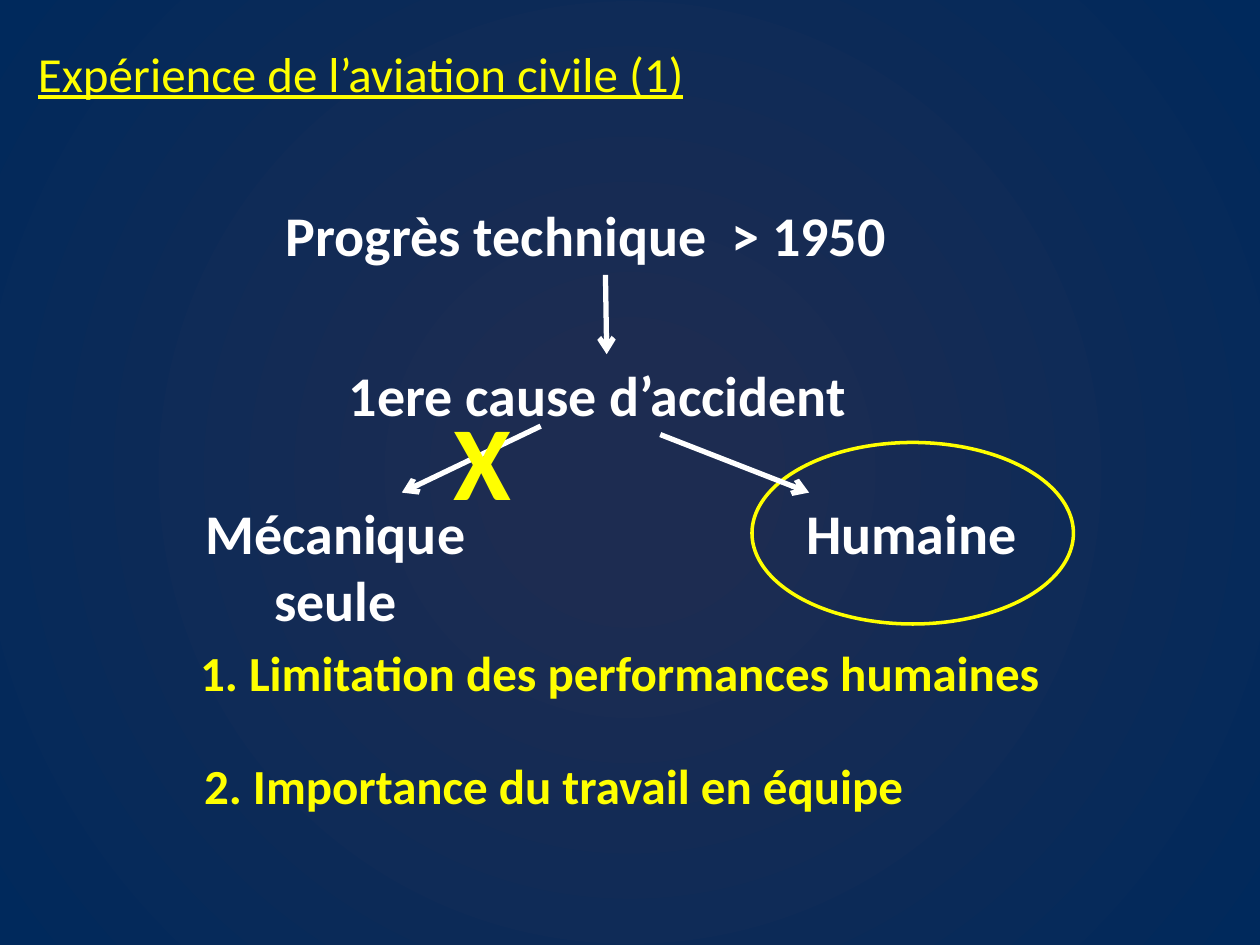
"""Build the slide on what civil aviation teaches about accident causes."""
import pptx
import pptx.dml.color
import pptx.enum.shapes
import pptx.enum.text
import pptx.oxml
import pptx.oxml.ns
import pptx.util

Cm = pptx.util.Cm
COLOURS = {"white": "FFFFFF", "yellow": "FFFF00", "centre": "1D2C51", "edge": "00295C"}
TITLE = {"size": 28, "colour": "yellow", "underline": True}
CAUSE = {"size": 32, "colour": "white", "bold": True}
LESSON = {"size": 28, "colour": "yellow", "bold": True}
CROSS = {"size": 60, "colour": "yellow", "bold": True}


def colour(name):
    return pptx.dml.color.RGBColor.from_string(COLOURS[name])


def add_xml(parent, tag, **attributes):
    child = pptx.oxml.parse_xml(f"<a:{tag} {pptx.oxml.ns.nsdecls('a')}/>")
    for name, value in attributes.items():
        child.set(name, str(value))
    parent.append(child)
    return child


class SlideBuilder:
    """Hold the style and the current slide, and add each kind of element."""

    def __init__(self, deck, layout, font_name="Calibri"):
        self.page = deck.slides.add_slide(deck.slide_layouts[layout])
        self.font_name = font_name

    def background(self, inner, outer, start):
        fill = self.page.background.fill
        fill.gradient()
        for stop, name, position in zip(fill.gradient_stops, (inner, outer), (start, 1)):
            stop.color.rgb = colour(name)
            stop.position = position
        gradient = self.page.element.xpath(".//a:gradFill")[0]
        gradient.remove(gradient.find(pptx.oxml.ns.qn("a:lin")))
        circle = add_xml(gradient, "path", **{"path": "circle"})
        add_xml(circle, "fillToRect", l=50000, t=50000, r=50000, b=50000)

    def fill_box(self, box, place, lines, style):
        box.left, box.top, box.width, box.height = map(Cm, place)
        frame = box.text_frame
        frame_format = {
            "text": "\n".join(lines),
            "word_wrap": False,
            "auto_size": pptx.enum.text.MSO_AUTO_SIZE.SHAPE_TO_FIT_TEXT,
            "vertical_anchor": pptx.enum.text.MSO_ANCHOR.TOP,
        }
        for name, value in frame_format.items():
            setattr(frame, name, value)
        font_format = {"name": self.font_name, **style, "size": pptx.util.Pt(style["size"])}
        shade = colour(font_format.pop("colour"))
        for index, para in enumerate(frame.paragraphs):
            align = pptx.enum.text.PP_ALIGN
            para.alignment = align.CENTER if index else align.LEFT
            for span in para.runs:
                for name, value in font_format.items():
                    setattr(span.font, name, value)
                span.font.color.rgb = shade
        return box

    def title(self, place, text):
        return self.fill_box(self.page.shapes.title, place, [text], TITLE)

    def lesson(self, index, place, text):
        box = self.fill_box(self.page.placeholders[index], place, [text], LESSON)
        para = box.text_frame.paragraphs[0]
        para.space_before = pptx.util.Pt(0)
        properties = para._p.get_or_add_pPr()
        properties.set("marL", "0")
        properties.set("indent", "0")
        add_xml(properties, "buNone")
        return box

    def text(self, place, *lines, style=CAUSE):
        box = self.page.shapes.add_textbox(0, 0, 0, 0)
        return self.fill_box(box, place, lines, style)

    def ellipse(self, place):
        kind = pptx.enum.shapes.MSO_SHAPE.OVAL
        ring = self.page.shapes.add_shape(kind, *map(Cm, place))
        ring.shadow.inherit = False
        ring.fill.background()
        ring.line.color.rgb = colour("yellow")
        ring.line.width = pptx.util.Pt(2)
        return ring

    def arrow(self, start, end):
        kind = pptx.enum.shapes.MSO_CONNECTOR.STRAIGHT
        line = self.page.shapes.add_connector(kind, *map(Cm, start + end))
        line.line.color.rgb = colour("white")
        line.line.width = pptx.util.Pt(3)
        properties = line.element.spPr
        add_xml(properties.find(pptx.oxml.ns.qn("a:ln")), "tailEnd", type="arrow")
        add_xml(properties, "effectLst")
        return line


def main():
    deck = pptx.Presentation()
    deck.slide_width, deck.slide_height = Cm(25.4), Cm(19.05)
    slide = SlideBuilder(deck, layout=3)
    slide.background("centre", "edge", start=0.14)
    slide.title((0.51, 0.74, 13.72, 1.45), "Expérience de l’aviation civile (1)")

    slide.ellipse((15.16, 8.92, 6.48, 3.66))
    slide.text((3.89, 9.93, 5.79, 3), "Mécanique", "seule")
    progress = slide.text((5.51, 3.91, 13.39, 1.63), "Progrès technique  > 1950")
    accident = slide.text((6.78, 7.14, 10.9, 1.63), "1ere cause d’accident")
    slide.text((16, 9.93, 4.8, 1.63), "Humaine")

    down = slide.arrow((12.22, 5.54), (12.22, 7.14))
    down.begin_connect(progress, 2)
    down.end_connect(accident, 0)
    slide.arrow((13.31, 8.76), (16.31, 9.93))
    slide.arrow((10.9, 8.59), (8.1, 9.93))
    slide.text((8.89, 7.85, 1.68, 2.82), "X", style=CROSS)

    slide.lesson(1, (3.78, 12.83, 17.63, 1.45), "1. Limitation des performances humaines")
    slide.lesson(2, (3.86, 15.11, 14.78, 1.45), "2. Importance du travail en équipe")
    deck.save("out.pptx")


if __name__ == "__main__":
    main()
